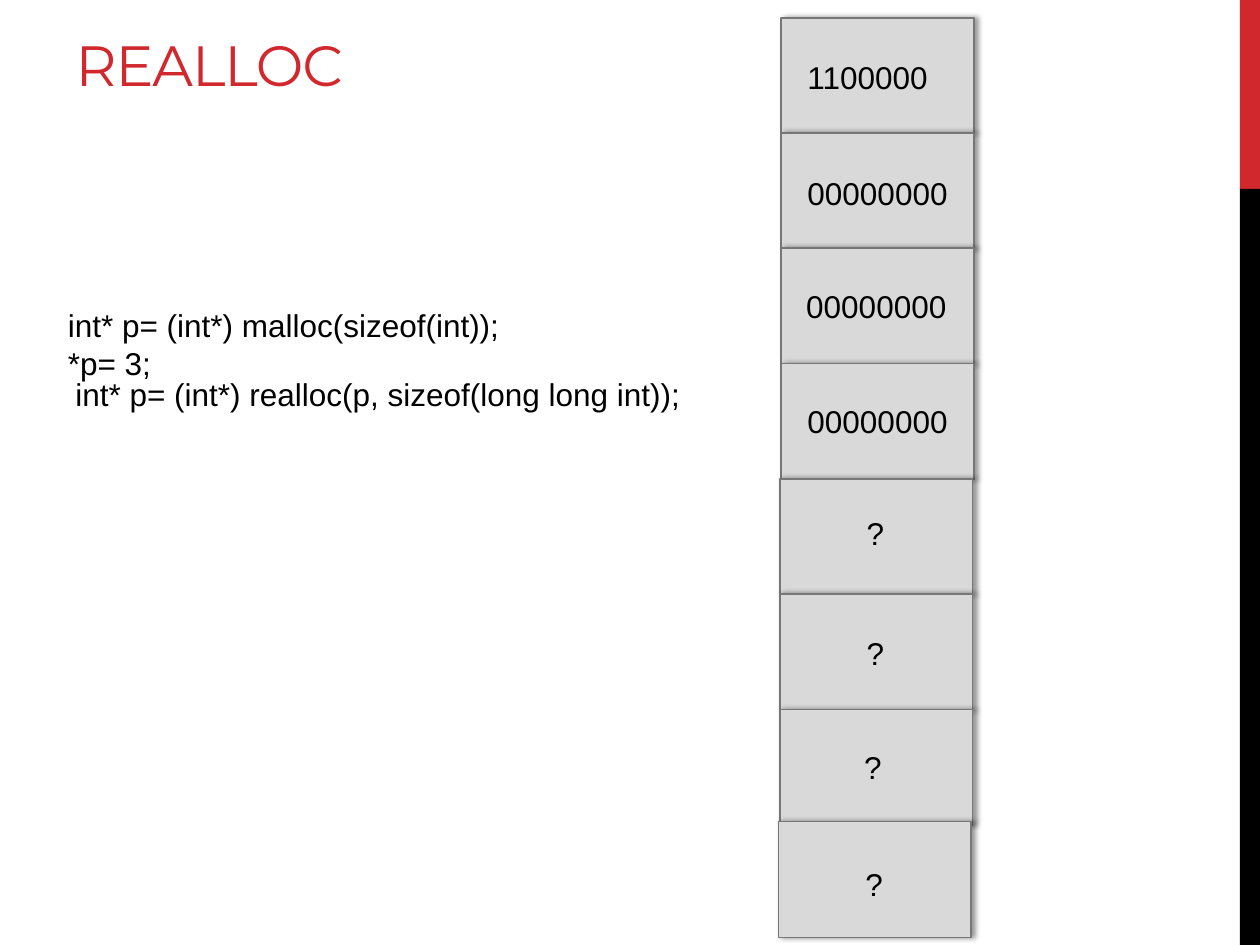
from lxml import etree
from pptx import Presentation
from pptx.dml.color import RGBColor
from pptx.enum.shapes import MSO_SHAPE
from pptx.enum.text import MSO_ANCHOR, MSO_AUTO_SIZE, PP_ALIGN
from pptx.oxml.ns import qn
from pptx.util import Inches, Pt

COLORS = {"red": "D1282E", "black": "000000", "cell": "D9D9D9", "edge": "777777"}

TITLE = "REALLOC"
# left, top, width, height, lines
CODE = [
    (0.44, 2.38, 3.66, 0.71, ["int* p= (int*) malloc(sizeof(int));", "*p= 3;"]),
    (0.5, 2.93, 5.05, 0.4, ["int* p= (int*) realloc(p, sizeof(long long int));"]),
]
# byte value, cell left, label left, label top, label width
ALLOCATED = [
    ("1100000", 6.2, 6.31, 0.41, 1.17),
    ("00000000", 6.2, 6.31, 1.33, 1.32),
    ("00000000", 6.2, 6.3, 2.23, 1.32),
    ("00000000", 6.2, 6.31, 3.14, 1.32),
]
ADDED = [
    ("?", 6.19, 6.78, 4.03, 0.34),
    ("?", 6.19, 6.78, 4.98, 0.34),
    ("?", 6.19, 6.76, 5.89, 0.34),
    ("?", 6.18, 6.77, 6.82, 0.34),
]
SIDEBAR = [("red", 0, 1.5), ("black", 1.5, 6)]  # colour, top, height
CELL_TOP, CELL_STEP, CELL_W, CELL_H = 0.14, 0.915, 1.53, 0.92
LAST_CELL_TOP = 6.52


def rgb(name):
    return RGBColor.from_string(COLORS[name])


def add_rect(shapes, left, top, width, height, fill):
    rect = shapes.add_shape(MSO_SHAPE.RECTANGLE, Inches(left), Inches(top),
                            Inches(width), Inches(height))
    rect.shadow.inherit = False
    rect.fill.solid()
    rect.fill.fore_color.rgb = rgb(fill)
    rect.line.fill.background()
    return rect


def add_cell(shapes, left, top):
    cell = add_rect(shapes, left, top, CELL_W, CELL_H, "cell")
    cell.line.color.rgb = rgb("edge")
    cell.line.width = Pt(1)
    effects = cell._element.spPr.find(qn("a:effectLst"))
    shadow = etree.SubElement(effects, qn("a:outerShdw"), blurRad=str(Pt(3.1)),
                              dist=str(Pt(1.8)), dir="0", rotWithShape="0")
    tint = etree.SubElement(shadow, qn("a:srgbClr"), val=COLORS["black"])
    etree.SubElement(tint, qn("a:alpha"), val="40000")


def add_text(shapes, left, top, width, height, lines):
    frame = shapes.add_textbox(Inches(left), Inches(top),
                               Inches(width), Inches(height)).text_frame
    frame.word_wrap = False
    frame.auto_size = MSO_AUTO_SIZE.SHAPE_TO_FIT_TEXT
    for i, line in enumerate(lines):
        paragraph = frame.paragraphs[0] if i == 0 else frame.add_paragraph()
        run = paragraph.add_run()
        run.text = line
        run.font.size = Pt(18)
        run.font.name = "Arial"
        run.font.color.rgb = rgb("black")


def add_memory(shapes, memory, first):
    for i, (_, cell_left, *_) in enumerate(memory, first):
        last = i == len(ALLOCATED) + len(ADDED) - 1
        add_cell(shapes, cell_left, LAST_CELL_TOP if last else CELL_TOP + CELL_STEP * i)
    for value, _, left, top, width in memory:
        add_text(shapes, left, top, width, 0.4, [value])


def main():
    prs = Presentation()
    prs.slide_width, prs.slide_height = Inches(10), Inches(7.5)
    slide = prs.slides.add_slide(prs.slide_layouts[5])
    shapes = slide.shapes

    # Sidebar
    for color, top, height in SIDEBAR:
        add_rect(shapes, 9.84, top, 0.16, height, color)

    # Title
    title = shapes.title
    title.left, title.top = Inches(0.5), Inches(0.17)
    title.width, title.height = Inches(9.02), Inches(0.66)
    title.text_frame.vertical_anchor = MSO_ANCHOR.BOTTOM
    title.text_frame.auto_size = MSO_AUTO_SIZE.NONE
    heading = title.text_frame.paragraphs[0]
    heading.alignment = PP_ALIGN.LEFT
    run = heading.add_run()
    run.text = TITLE
    run.font.size = Pt(32.4)
    run.font.name = "Montserrat"
    run.font.color.rgb = rgb("red")
    run.font._element.set("spc", "-60")

    # Code and memory column
    for left, top, width, height, lines in CODE:
        add_text(shapes, left, top, width, height, lines)
    add_memory(shapes.add_group_shape().shapes, ALLOCATED, 0)
    add_memory(shapes.add_group_shape().shapes, ADDED, len(ALLOCATED))

    prs.save("out.pptx")


if __name__ == "__main__":
    main()
